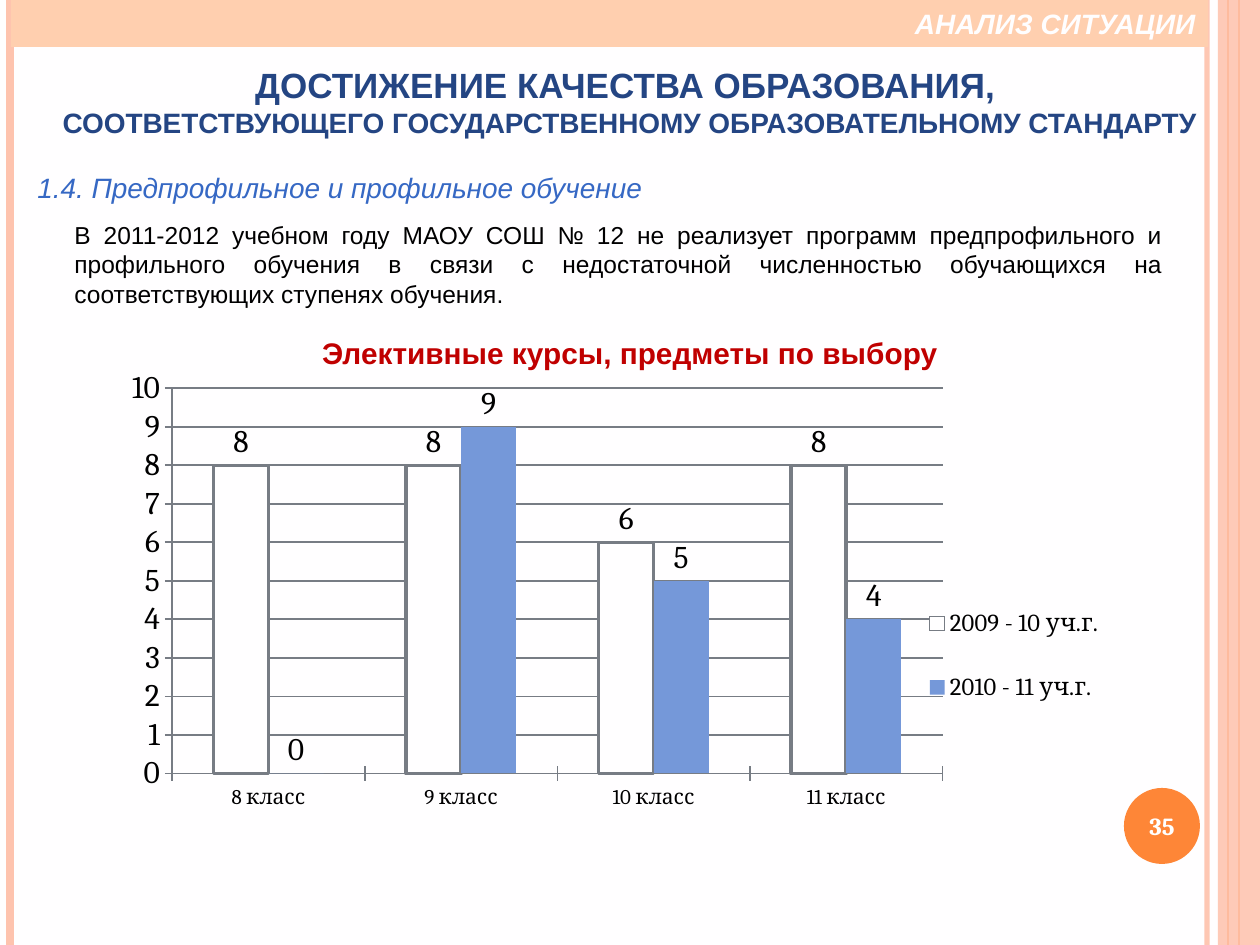
import pptx
import pptx.util
import pptx.chart.data
import pptx.dml.color
import pptx.enum.chart
import pptx.enum.shapes
import pptx.enum.text
import pptx.oxml
import pptx.oxml.ns

SCALE = 914400 / 126
ALIGN = pptx.enum.text.PP_ALIGN
ANCHOR = pptx.enum.text.MSO_ANCHOR
SHAPES = pptx.enum.shapes.MSO_SHAPE
CHART = pptx.enum.chart
GRAY = "777C84"
PEACH = "FEC3AE"
ORANGE = "FE8637"
WHITE = "FFFEFF"

SIDE_LINES = [
    (1207, PEACH, 3, 93),
    (10, PEACH, 4.5, 100),
    (1239, ORANGE, 1.5, 100),
    (1228, ORANGE, 0.75, 100),
]
SIDE_BAND = (1218, 0, 42, 945)
NUMBER_CIRCLE = (1124, 788, 76, 76)
HEADER_BOX = (11, 0, 1197, 47)
TITLE_BOX = (0, 57, 1260, 89)
SECTION_BOX = (0, 164, 1260, 47)
BODY_BOX = (62, 213, 1113, 102)
CHART_BOX = (54, 309, 1085, 559)
CHART_TITLE_BOX = (0, 329, 1260, 49)
NUMBER_BOX = (1120, 790, 84, 72)

TITLE_LINES = [
    ("ДОСТИЖЕНИЕ КАЧЕСТВА ОБРАЗОВАНИЯ, ", 20),
    ("СООТВЕТСТВУЮЩЕГО ГОСУДАРСТВЕННОМУ ОБРАЗОВАТЕЛЬНОМУ СТАНДАРТУ", 16),
]
BODY = (
    "В 2011-2012 учебном году МАОУ СОШ № 12 не реализует программ "
    "предпрофильного и профильного обучения в связи с недостаточной "
    "численностью обучающихся на соответствующих ступенях обучения."
)
CLASSES = ["8 класс", "9 класс", "10 класс", "11 класс"]
YEARS = [
    ("2009 - 10 уч.г.", (8, 8, 6, 8), WHITE, GRAY),
    ("2010 - 11 уч.г.", (0, 9, 5, 4), "7598D9", None),
]
PLOT_LAYOUT = (0.109, 0.142, 0.71, 0.689)
LEGEND_LAYOUT = (0.80, 0.475, 0.17, 0.29)


def px(length):
    return pptx.util.Emu(round(length * SCALE))


def color(value):
    return pptx.dml.color.RGBColor.from_string(value)


def set_alpha(element, percent):
    if percent < 100:
        for tint in element.iter(pptx.oxml.ns.qn("a:srgbClr")):
            pptx.oxml.ns.qn("a:alpha")
            alpha = tint.makeelement(pptx.oxml.ns.qn("a:alpha"), {"val": str(percent * 1000)})
            tint.append(alpha)


def add_line(slide, x, line_color, width, opacity):
    line = slide.shapes.add_connector(
        pptx.enum.shapes.MSO_CONNECTOR.STRAIGHT, px(x), 0, px(x), px(945)
    )
    line.line.color.rgb = color(line_color)
    line.line.width = pptx.util.Pt(width)
    set_alpha(line.line._ln, opacity)
    properties = line._element.spPr
    properties.append(properties.makeelement(pptx.oxml.ns.qn("a:effectLst"), {}))


def add_block(slide, kind, box, fill, opacity=100):
    shape = slide.shapes.add_shape(kind, *map(px, box))
    shape.shadow.inherit = False
    shape.fill.solid()
    shape.fill.fore_color.rgb = color(fill)
    shape.line.fill.background()
    set_alpha(shape._element.spPr, opacity)
    return shape


def write(shape, lines, font_color, align, anchor=ANCHOR.TOP, font="Arial", bold=False, italic=False):
    frame = shape.text_frame
    frame.word_wrap = True
    frame.auto_size = pptx.enum.text.MSO_AUTO_SIZE.NONE
    frame.vertical_anchor = anchor
    paragraph = frame.paragraphs[0]
    paragraph.alignment = align
    for index, (text, size) in enumerate(lines):
        if index:
            paragraph.add_line_break()
        run = paragraph.add_run()
        run.text = text
        run.font.name = font
        run.font.size = pptx.util.Pt(size)
        run.font.bold = bold
        run.font.italic = italic
        run.font.color.rgb = color(font_color)
    return paragraph


def add_text(slide, box, *args, **options):
    return write(slide.shapes.add_textbox(*map(px, box)), *args, **options)


def set_layout(parent, position, place, inner=False):
    target = '<c:layoutTarget val="inner"/>' if inner else ""
    modes = "".join(f'<c:{side}Mode val="edge"/>' for side in "xy")
    sizes = "".join(f'<c:{side} val="{value}"/>' for side, value in zip("xywh", place))
    for old in parent.findall(pptx.oxml.ns.qn("c:layout")):
        parent.remove(old)
    parent.insert(position, pptx.oxml.parse_xml(
        f'<c:layout {pptx.oxml.ns.nsdecls("c")}><c:manualLayout>'
        f"{target}{modes}{sizes}</c:manualLayout></c:layout>"
    ))


def add_course_chart(slide):
    data = pptx.chart.data.CategoryChartData()
    data.categories = CLASSES
    for name, values, _, _ in YEARS:
        data.add_series(name, values)
    chart = slide.shapes.add_chart(
        CHART.XL_CHART_TYPE.COLUMN_CLUSTERED, *map(px, CHART_BOX), data
    ).chart
    chart.has_title = False
    chart.font.name = "Cambria"
    chart.font.size = pptx.util.Pt(18)
    chart.font.color.rgb = color("000000")

    plot = chart.plots[0]
    plot.vary_by_categories = False
    plot.gap_width = 150
    plot.overlap = 0
    for series, (_, _, fill, outline) in zip(plot.series, YEARS):
        series.invert_if_negative = False
        series.format.fill.solid()
        series.format.fill.fore_color.rgb = color(fill)
        if outline:
            series.format.line.color.rgb = color(outline)
            series.format.line.width = pptx.util.Pt(2)
        else:
            series.format.line.fill.background()
        series.data_labels.show_value = True
        series.data_labels.position = CHART.XL_LABEL_POSITION.OUTSIDE_END

    value_axis, category_axis = chart.value_axis, chart.category_axis
    value_axis.minimum_scale = 0
    value_axis.maximum_scale = 10
    value_axis.major_unit = 1
    value_axis.has_major_gridlines = True
    category_axis.tick_labels.font.size = pptx.util.Pt(12)
    for axis in (value_axis, category_axis):
        axis.major_tick_mark = CHART.XL_TICK_MARK.CROSS
    for part in (value_axis, category_axis, value_axis.major_gridlines):
        part.format.line.color.rgb = color(GRAY)
        part.format.line.width = pptx.util.Pt(1)

    chart.has_legend = True
    chart.legend.position = CHART.XL_LEGEND_POSITION.RIGHT
    chart.legend.include_in_layout = False
    chart.legend.font.size = pptx.util.Pt(14)
    set_layout(chart._chartSpace.chart.plotArea, 0, PLOT_LAYOUT, inner=True)
    set_layout(chart.legend._element, 1, LEGEND_LAYOUT)


def main():
    presentation = pptx.Presentation()
    presentation.slide_width = px(1260)
    presentation.slide_height = px(945)
    slide = presentation.slides.add_slide(presentation.slide_layouts[5])
    slide.background.fill.solid()
    slide.background.fill.fore_color.rgb = color(WHITE)

    title = slide.shapes.title
    title.left, title.top, title.width, title.height = map(px, TITLE_BOX)
    write(title, TITLE_LINES, "244583", ALIGN.CENTER, bold=True)

    for line in SIDE_LINES:
        add_line(slide, *line)
    add_block(slide, SHAPES.RECTANGLE, SIDE_BAND, PEACH, 87)
    add_block(slide, SHAPES.OVAL, NUMBER_CIRCLE, ORANGE)
    add_text(slide, NUMBER_BOX, [("35", 14)], "FFFFFF", ALIGN.CENTER,
             ANCHOR.MIDDLE, "Cambria", bold=True)

    section = add_text(slide, SECTION_BOX, [("1.4. Предпрофильное и профильное обучение", 16)],
                       "3668C4", ALIGN.LEFT, italic=True)
    section._p.get_or_add_pPr().set("marL", str(px(25)))
    body = add_block(slide, SHAPES.RECTANGLE, BODY_BOX, WHITE)
    write(body, [(BODY, 14)], "000000", ALIGN.JUSTIFY, ANCHOR.MIDDLE)
    header = add_block(slide, SHAPES.RECTANGLE, HEADER_BOX, "FFCFAF")
    write(header, [("АНАЛИЗ СИТУАЦИИ", 16)], WHITE, ALIGN.RIGHT, bold=True, italic=True)

    add_course_chart(slide)
    add_text(slide, CHART_TITLE_BOX, [("Элективные курсы, предметы по выбору", 17)],
             "C00000", ALIGN.CENTER, bold=True)
    presentation.save("out.pptx")


if __name__ == "__main__":
    main()
